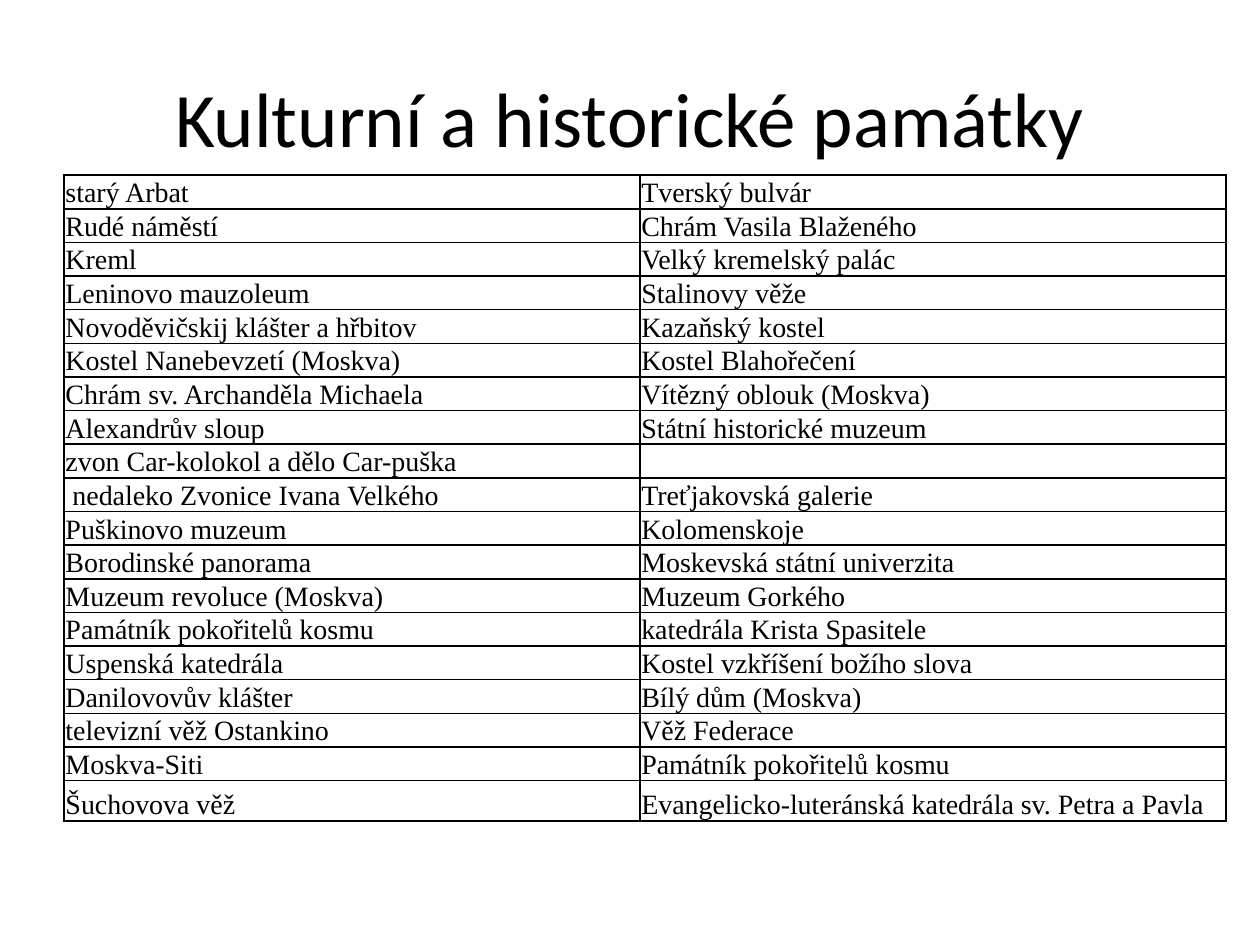
"""Build a slide listing the cultural and historical sights of Moscow."""
from lxml import etree
from pptx import Presentation
from pptx import util as u
from pptx.dml.color import RGBColor
from pptx.enum import text
from pptx.oxml.ns import qn

HEADING = "Kulturní a historické památky"
SIGHTS = [
    ("starý Arbat", "Tverský bulvár"),
    ("Rudé náměstí", "Chrám Vasila Blaženého"),
    ("Kreml", "Velký kremelský palác"),
    ("Leninovo mauzoleum", "Stalinovy věže"),
    ("Novoděvičskij klášter a hřbitov", "Kazaňský kostel"),
    ("Kostel Nanebevzetí (Moskva)", "Kostel Blahořečení"),
    ("Chrám sv. Archanděla Michaela", "Vítězný oblouk (Moskva)"),
    ("Alexandrův sloup", "Státní historické muzeum"),
    ("zvon Car-kolokol a dělo Car-puška", ""),
    (" nedaleko Zvonice Ivana Velkého", "Treťjakovská galerie"),
    ("Puškinovo muzeum", "Kolomenskoje"),
    ("Borodinské panorama", "Moskevská státní univerzita"),
    ("Muzeum revoluce (Moskva)", "Muzeum Gorkého"),
    ("Památník pokořitelů kosmu", "katedrála Krista Spasitele"),
    ("Uspenská katedrála", "Kostel vzkříšení božího slova"),
    ("Danilovovův klášter", "Bílý dům (Moskva)"),
    ("televizní věž Ostankino", "Věž Federace"),
    ("Moskva-Siti", "Památník pokořitelů kosmu"),
    ("Šuchovova věž", "Evangelicko-luteránská katedrála sv. Petra a Pavla"),
]
BLACK = RGBColor(0, 0, 0)
COLUMNS = (4.57, 4.65)
LAST_ROW = 0.32
ROW = 4.8 / (len(SIGHTS) - 1)


def style(paragraph, face, size):
    for run in paragraph.runs:
        run.font.name, run.font.size = face, u.Pt(size)
        run.font.color.rgb = BLACK


def add_borders(cell):
    props = cell._tc.get_or_add_tcPr()
    for position, side in enumerate(("lnL", "lnR", "lnT", "lnB")):
        line = etree.Element(qn(f"a:{side}"), w=str(u.Pt(1)))
        fill = etree.SubElement(line, qn("a:solidFill"))
        etree.SubElement(fill, qn("a:srgbClr"), val=str(BLACK))
        props.insert(position, line)


def fill_cell(cell, sight):
    cell.margin_left = cell.margin_right = u.Inches(0.01)
    cell.margin_top = cell.margin_bottom = 0
    cell.vertical_anchor = text.MSO_ANCHOR.BOTTOM
    cell.fill.background()
    add_borders(cell)
    paragraph = cell.text_frame.paragraphs[0]
    if sight:
        paragraph.text = sight
        style(paragraph, "Times New Roman", 16)
    else:
        etree.SubElement(paragraph._p, qn("a:endParaRPr"), sz="1200")


def add_heading(slide):
    heading = slide.shapes.add_textbox(*map(u.Inches, (0.5, 0.3, 9, 1.25)))
    frame = heading.text_frame
    frame.word_wrap = True
    frame.vertical_anchor = text.MSO_ANCHOR.MIDDLE
    frame.text = HEADING
    frame.paragraphs[0].alignment = text.PP_ALIGN.CENTER
    style(frame.paragraphs[0], "Calibri", 44)


def add_sights(slide):
    height = ROW * (len(SIGHTS) - 1) + LAST_ROW
    box = map(u.Inches, (0.51, 1.39, sum(COLUMNS), height))
    sights = slide.shapes.add_table(len(SIGHTS), len(COLUMNS), *box).table
    sights.first_row = sights.horz_banding = False
    for column, width in zip(sights.columns, COLUMNS):
        column.width = u.Inches(width)
    for row, pair in zip(sights.rows, SIGHTS):
        row.height = u.Inches(LAST_ROW if pair == SIGHTS[-1] else ROW)
        for cell, sight in zip(row.cells, pair):
            fill_cell(cell, sight)


def main():
    deck = Presentation()
    deck.slide_width, deck.slide_height = u.Inches(10), u.Inches(7.5)
    slide = deck.slides.add_slide(deck.slide_layouts[6])
    add_heading(slide)
    add_sights(slide)
    deck.save("out.pptx")


if __name__ == "__main__":
    main()
